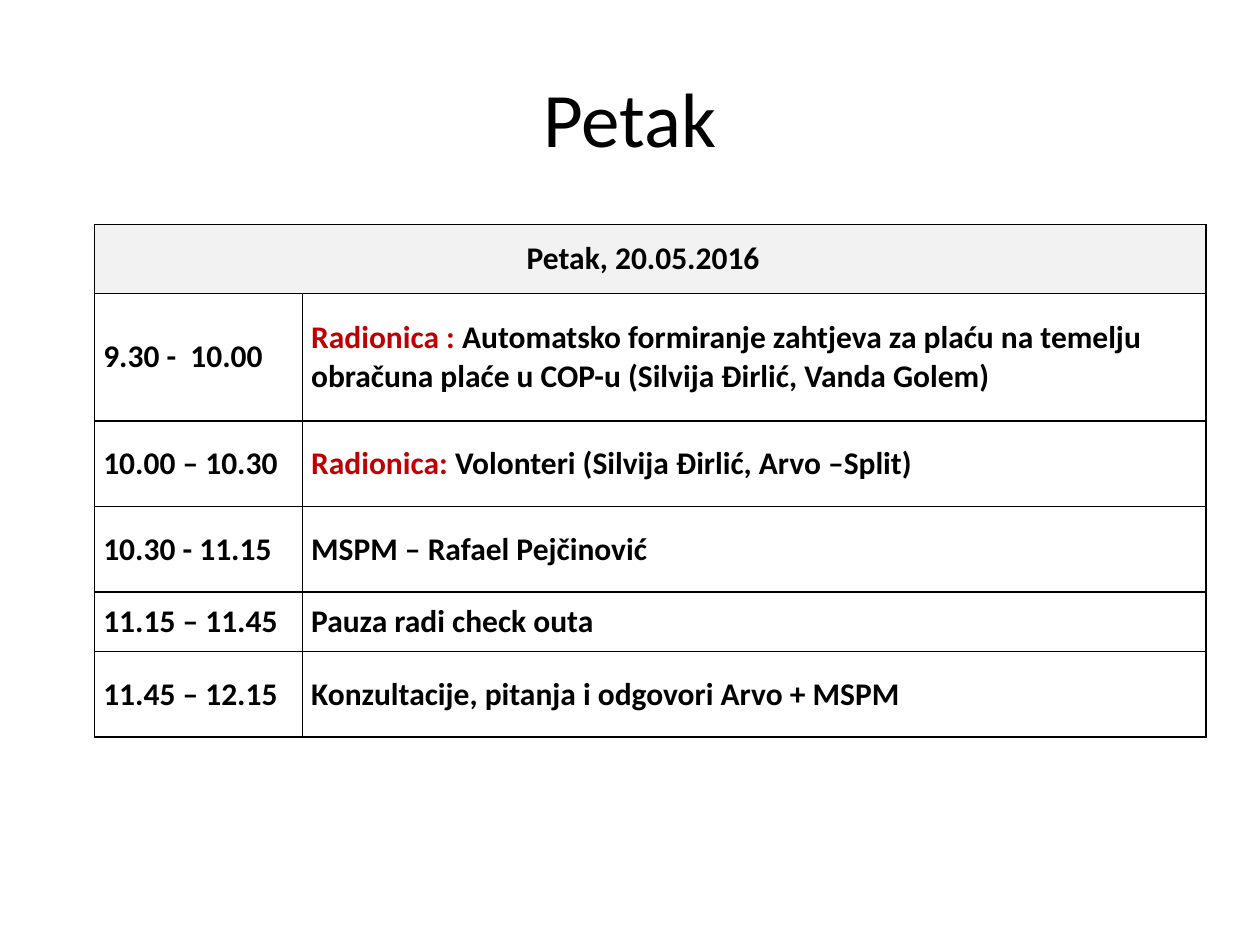
from lxml import etree
from pptx import Presentation, util as u
from pptx.dml.color import RGBColor
from pptx.enum import text
from pptx.oxml.ns import qn

BLACK = RGBColor(0x00, 0x00, 0x00)
RED = RGBColor(0xC0, 0x00, 0x00)
GREY = RGBColor(0xF2, 0xF2, 0xF2)

HEADER = "Petak, 20.05.2016"
SCHEDULE = [
    ("9.30 -  10.00", "Radionica : ",
     "Automatsko formiranje zahtjeva za plaću na temelju obračuna plaće "
     "u COP-u (Silvija Đirlić, Vanda Golem)"),
    ("10.00 – 10.30", "Radionica: ", "Volonteri (Silvija Đirlić, Arvo –Split)"),
    ("10.30 - 11.15", "", "MSPM – Rafael Pejčinović"),
    ("11.15 – 11.45", "", "Pauza radi check outa"),
    ("11.45 – 12.15", "", "Konzultacije, pitanja i odgovori Arvo + MSPM"),
]
COLUMNS = [0.165, 0.717]
ROWS = [0.0733, 0.1347, 0.0907, 0.0907, 0.0627, 0.0907]


def add_run(p, content, size=18, bold=True, color=BLACK, font="Calibri"):
    """Append a formatted run to a paragraph."""
    r = p.add_run()
    r.text = content
    r.font.name, r.font.size, r.font.bold = font, u.Pt(size), bold
    r.font.color.rgb = color


class Deck:
    """Hold the presentation style and the current slide, sized in slide shares."""

    def __init__(self, width=10, height=7.5):
        self.prs = Presentation()
        self.prs.slide_width, self.prs.slide_height = u.Inches(width), u.Inches(height)
        self.s = self.prs.slides.add_slide(self.prs.slide_layouts[5])

    def x(self, share):
        return int(self.prs.slide_width * share)

    def y(self, share):
        return int(self.prs.slide_height * share)

    def title(self, content, left, top, width, height):
        sp = self.s.shapes.title
        sp.left, sp.top = self.x(left), self.y(top)
        sp.width, sp.height = self.x(width), self.y(height)
        sp.text_frame.vertical_anchor = text.MSO_ANCHOR.MIDDLE
        p = sp.text_frame.paragraphs[0]
        p.alignment = text.PP_ALIGN.CENTER
        add_run(p, content, size=44, bold=False)

    def borders(self, cell, width=1):
        tc_pr = cell._tc.get_or_add_tcPr()
        for side in ("lnL", "lnR", "lnT", "lnB"):
            ln = etree.SubElement(tc_pr, qn(f"a:{side}"), w=str(u.Pt(width)))
            fill = etree.SubElement(ln, qn("a:solidFill"))
            etree.SubElement(fill, qn("a:srgbClr"), val=str(BLACK))

    def cell(self, cell, *runs, align=text.PP_ALIGN.LEFT, right=0.07):
        cell.margin_left, cell.margin_right = u.Inches(0.07), u.Inches(right)
        cell.margin_top = cell.margin_bottom = 0
        cell.vertical_anchor = text.MSO_ANCHOR.MIDDLE
        p = cell.text_frame.paragraphs[0]
        p.alignment = align
        for content, color in runs:
            if content:
                add_run(p, content, color=color)

    def schedule(self, header, entries, left, top):
        table = self.s.shapes.add_table(
            len(ROWS), len(COLUMNS), self.x(left), self.y(top),
            self.x(sum(COLUMNS)), self.y(sum(ROWS))).table
        table.first_row = table.horz_banding = False
        for column, share in zip(table.columns, COLUMNS):
            column.width = self.x(share)
        for row, share in zip(table.rows, ROWS):
            row.height = self.y(share)
        for cell in table.iter_cells():
            self.borders(cell)
            cell.fill.background()
        first = table.cell(0, 0)
        first.merge(table.cell(0, 1))
        first.fill.solid()
        first.fill.fore_color.rgb = GREY
        self.cell(first, (header, BLACK), align=text.PP_ALIGN.CENTER, right=0.18)
        for i, (time, label, topic) in enumerate(entries, 1):
            self.cell(table.cell(i, 0), (time, BLACK))
            self.cell(table.cell(i, 1), (label, RED), (topic, BLACK))


def main():
    deck = Deck()
    deck.title("Petak", 0.05, 0.04, 0.9, 0.1667)
    deck.schedule(HEADER, SCHEDULE, 0.075, 0.2373)
    deck.prs.save("out.pptx")


if __name__ == "__main__":
    main()
